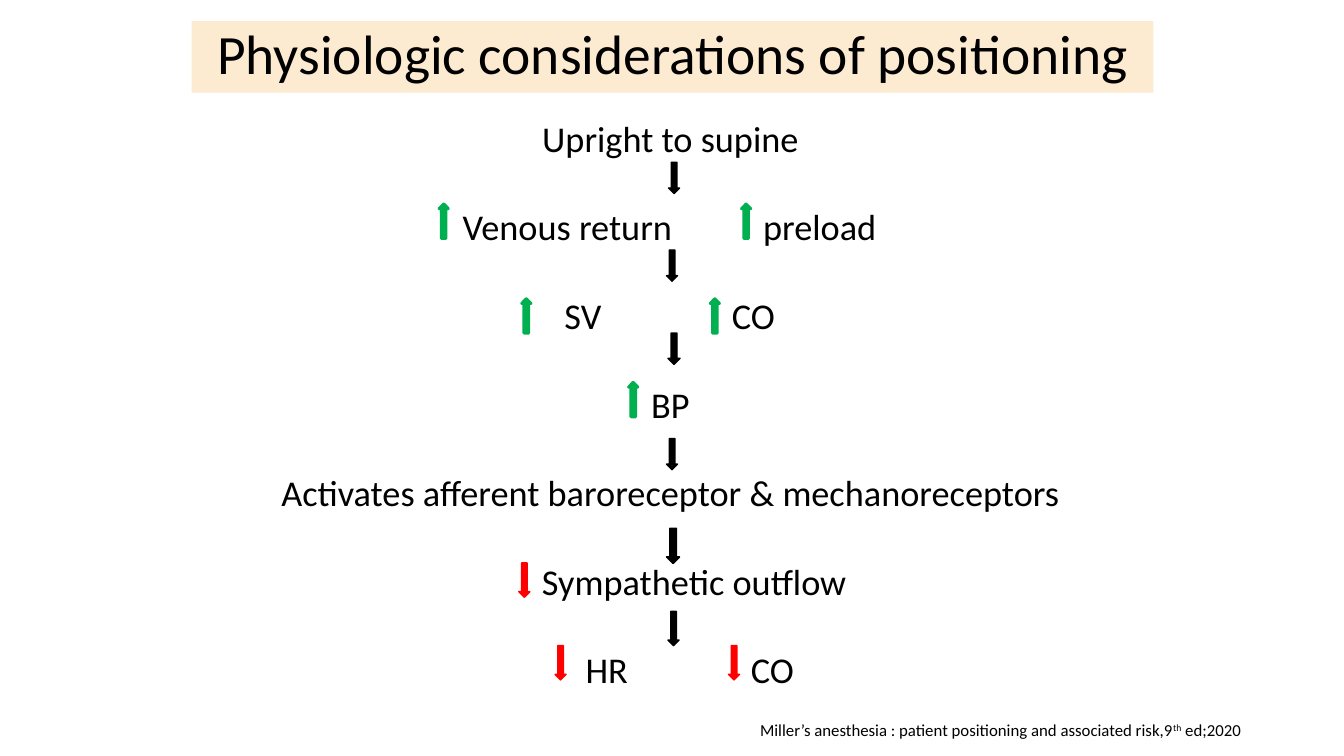
from lxml import etree
from pptx import Presentation
from pptx import util as u
from pptx.dml.color import RGBColor
from pptx.enum import shapes, text
from pptx.oxml.ns import qn

BLACK = RGBColor(0x00, 0x00, 0x00)
GREEN = RGBColor(0x00, 0xB0, 0x50)
RED = RGBColor(0xFF, 0x00, 0x00)
CREAM = RGBColor(0xFC, 0xEB, 0xD1)

UP, DOWN = 270, 90


class SlideBuilder:
    font_name = "Calibri"
    body_size = 25.9
    step_gap = 41.5  # points between two steps of the flow

    def __init__(self, presentation):
        self.slide = presentation.slides.add_slide(presentation.slide_layouts[5])

    def format_run(self, run, size):
        run.font.name = self.font_name
        run.font.size = u.Pt(size)
        run.font.color.rgb = BLACK

    def title(self, wording, left, top, width, height):
        shape = self.slide.shapes.title
        shape.left, shape.top = u.Inches(left), u.Inches(top)
        shape.width, shape.height = u.Inches(width), u.Inches(height)
        shape.fill.solid()
        shape.fill.fore_color.rgb = CREAM
        frame = shape.text_frame
        frame.text = wording
        frame.auto_size = text.MSO_AUTO_SIZE.NONE
        frame.vertical_anchor = text.MSO_ANCHOR.MIDDLE
        paragraph = frame.paragraphs[0]
        paragraph.alignment = text.PP_ALIGN.CENTER
        paragraph.line_spacing = 0.9
        self.format_run(paragraph.runs[0], 39.6)

    def text_box(self, left, top, width, height):
        shape = self.slide.shapes.add_textbox(
            u.Inches(left), u.Inches(top), u.Inches(width), u.Inches(height))
        shape.text_frame.word_wrap = True
        return shape.text_frame

    def flow(self, steps, left, top, width, height):
        """Each step is its wording, its tab stops and its left margin."""
        frame = self.text_box(left, top, width, height)
        frame.text = "\n".join(wording for wording, _, _ in steps)
        for index, (_, stops, margin) in enumerate(steps):
            paragraph = frame.paragraphs[index]
            paragraph.alignment = text.PP_ALIGN.LEFT if stops else text.PP_ALIGN.CENTER
            paragraph.line_spacing = 0.7
            paragraph.space_before = u.Pt(self.step_gap if index else 10)
            properties = paragraph._p.get_or_add_pPr()
            properties.set("marL", str(u.Inches(margin)))
            if stops:
                tab_list = etree.SubElement(properties, qn("a:tabLst"))
                for stop in stops:
                    etree.SubElement(tab_list, qn("a:tab"),
                                     pos=str(u.Inches(stop)), algn="l")
            for run in paragraph.runs:
                self.format_run(run, self.body_size)

    def citation(self, parts, left, top, width, height):
        """Parts alternate between normal and raised wording."""
        paragraph = self.text_box(left, top, width, height).paragraphs[0]
        for index, part in enumerate(parts):
            run = paragraph.add_run()
            run.text = part
            self.format_run(run, 12)
            if index % 2:
                run.font._element.set("baseline", "30000")

    def arrow(self, direction, color, left, top, length, thickness, line_width=1):
        shape = self.slide.shapes.add_shape(
            shapes.MSO_SHAPE.RIGHT_ARROW, u.Inches(left), u.Inches(top),
            u.Inches(length), u.Inches(thickness))
        shape.rotation = direction
        shape.shadow.inherit = False
        shape.fill.solid()
        shape.fill.fore_color.rgb = color
        shape.line.color.rgb = color
        shape.line.width = u.Pt(line_width)


def main():
    presentation = Presentation()
    presentation.slide_width = u.Inches(13.33)
    presentation.slide_height = u.Inches(7.5)
    builder = SlideBuilder(presentation)

    builder.title("Physiologic considerations of positioning", 1.9, 0.21, 9.54, 0.71)

    # Steps of the reflex; paired findings stand on tab stops
    builder.flow([
        ("Upright to supine", (), 0),
        ("\tVenous return\tpreload", (3.59, 6.57), 0),
        ("\tSV\tCO", (4.6, 6.26), 0),
        ("BP", (), 0),
        ("Activates afferent baroreceptor & mechanoreceptors", (), 0),
        ("Sympathetic outflow", (), 0.47),
        ("\tHR\tCO", (4.81, 6.45), 0),
    ], 0.9, 1.22, 11.5, 6.17)

    # Black arrows lead from step to step
    for left, top, length, thickness in [
        (6.53, 1.71, 0.31, 0.11), (6.51, 2.58, 0.31, 0.11),
        (6.53, 3.4, 0.31, 0.12), (6.51, 4.45, 0.31, 0.11),
        (6.5, 5.35, 0.35, 0.13), (6.51, 6.18, 0.34, 0.11),
    ]:
        builder.arrow(DOWN, BLACK, left, top, length, thickness)

    # Green arrows mark a rise, red arrows a fall
    for left, top in [(4.23, 2.15), (7.23, 2.15), (5.05, 3.09),
                      (6.92, 3.09), (6.11, 3.92)]:
        builder.arrow(UP, GREEN, left, top, 0.34, 0.09, 2.25)
    for left, top in [(5.03, 5.7), (5.39, 6.52), (7.11, 6.52)]:
        builder.arrow(DOWN, RED, left, top, 0.34, 0.11)

    # Citation
    builder.citation(
        ["Miller’s anesthesia : patient positioning and associated risk,9",
         "th", " ed;2020"], 7.44, 7.09, 5.8, 0.3)

    presentation.save("out.pptx")


if __name__ == "__main__":
    main()
